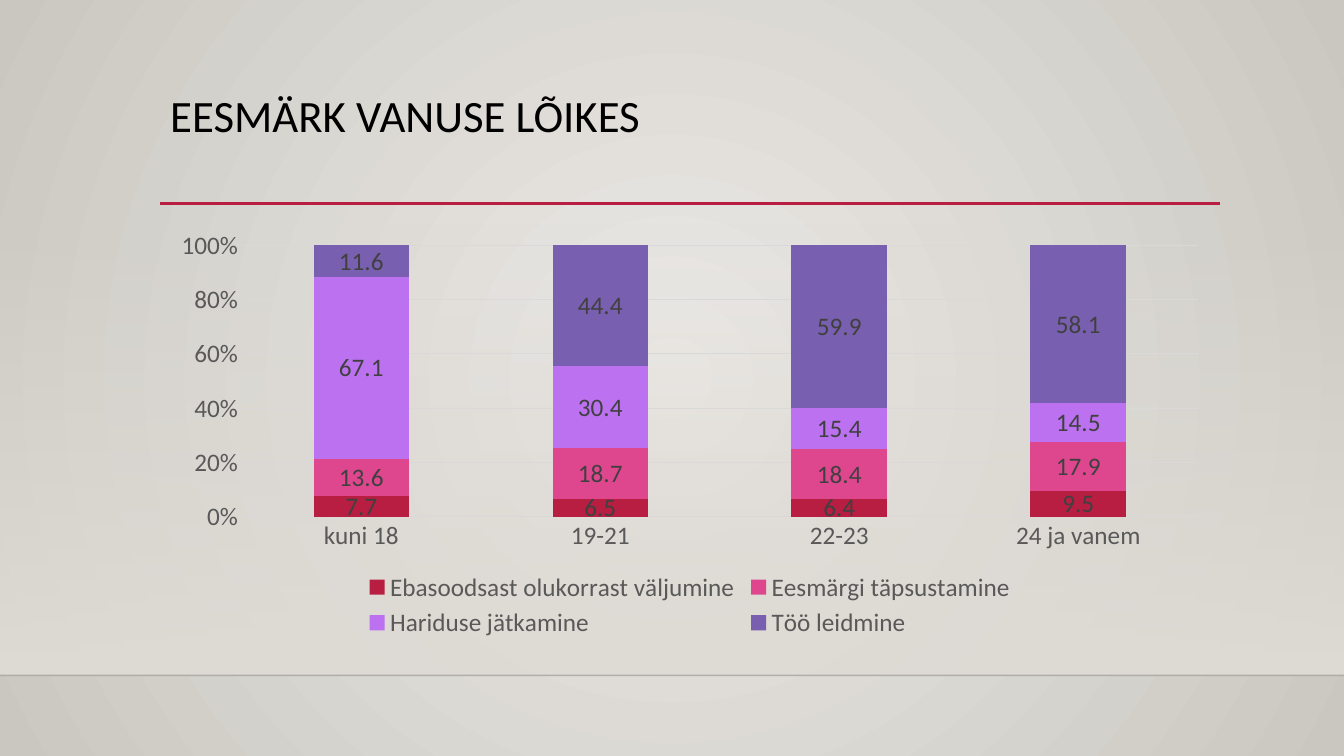
from pptx import Presentation
from pptx.chart.data import CategoryChartData
from pptx.dml.color import RGBColor
from pptx.enum.chart import XL_CHART_TYPE, XL_LABEL_POSITION, XL_LEGEND_POSITION, XL_TICK_MARK
from pptx.enum.shapes import MSO_CONNECTOR, MSO_SHAPE
from pptx.enum.text import MSO_ANCHOR
from pptx.oxml import parse_xml
from pptx.oxml.ns import nsdecls, qn
from pptx.util import Inches, Pt

TITLE = "EESMÄRK VANUSE LÕIKES"
AGES = ["kuni 18", "19-21", "22-23", "24 ja vanem"]
GOALS = [
    ("Ebasoodsast olukorrast väljumine", "B71E42", [7.7, 6.5, 6.4, 9.5]),
    ("Eesmärgi täpsustamine", "DE478E", [13.6, 18.7, 18.4, 17.9]),
    ("Hariduse jätkamine", "BC72F0", [67.1, 30.4, 15.4, 14.5]),
    ("Töö leidmine", "795FAF", [11.6, 44.4, 59.9, 58.1]),
]
FONT = "Calibri"
WIDTH, HEIGHT = 13.33, 7.5
LEFT, CONTENT_WIDTH = 1.59, 10.5
FLOOR_TOP, FLOOR_BOTTOM = 2.21, 6.7
RADIAL = ('<a:path path="circle"><a:fillToRect l="50000" t="50000" '
          'r="50000" b="50000"/></a:path>')
DOWNWARD = '<a:lin ang="5400000" scaled="0"/>'


def rgb(value):
    return RGBColor.from_string(value)


def style_font(font, size, color):
    font.name, font.size = FONT, Pt(size)
    font.color.rgb = rgb(color)


def set_gradient(fill, element, stops, direction):
    """Fill with (position %, colour, opacity %) stops."""
    fill.gradient()
    gs = "".join(
        f'<a:gs pos="{pos * 1000}"><a:srgbClr val="{color}">'
        f'<a:alpha val="{opacity * 1000}"/></a:srgbClr></a:gs>'
        for pos, color, opacity in stops)
    old = next(element.iter(qn("a:gradFill")))
    old.getparent().replace(old, parse_xml(
        f'<a:gradFill {nsdecls("a")} rotWithShape="1">'
        f'<a:gsLst>{gs}</a:gsLst>{direction}</a:gradFill>'))


def add_rule(slide, x1, x2, y, color, width, opacity=100):
    line = slide.shapes.add_connector(
        MSO_CONNECTOR.STRAIGHT, Inches(x1), Inches(y), Inches(x2), Inches(y))
    line.line.color.rgb = rgb(color)
    line.line.width = Pt(width)
    sp_pr = line._element.spPr
    if opacity < 100:
        next(sp_pr.iter(qn("a:srgbClr"))).append(
            parse_xml(f'<a:alpha {nsdecls("a")} val="{opacity * 1000}"/>'))
    sp_pr.append(parse_xml(f'<a:effectLst {nsdecls("a")}/>'))


def add_title(slide):
    box = slide.shapes.add_textbox(
        Inches(LEFT), Inches(0.88), Inches(CONTENT_WIDTH), Inches(1.15))
    tf = box.text_frame
    tf.word_wrap = True
    tf.vertical_anchor = MSO_ANCHOR.TOP
    p = tf.paragraphs[0]
    p.text = TITLE
    p.line_spacing = 0.9
    style_font(p.runs[0].font, 32, "000000")


def add_goal_chart(slide):
    data = CategoryChartData(number_format="0.0")
    data.categories = AGES
    for name, _, values in GOALS:
        data.add_series(name, values)
    chart = slide.shapes.add_chart(
        XL_CHART_TYPE.COLUMN_STACKED_100, Inches(LEFT), Inches(2.2),
        Inches(CONTENT_WIDTH), Inches(4.18), data).chart
    style_font(chart.font, 18, "000000")
    chart.has_title = False
    chart.has_legend = True
    chart.legend.position = XL_LEGEND_POSITION.BOTTOM
    chart.legend.include_in_layout = False
    style_font(chart.legend.font, 18, "595959")

    plot = chart.plots[0]
    plot.gap_width, plot.overlap = 150, 100
    plot.vary_by_categories = False
    for series, (_, color, _) in zip(plot.series, GOALS):
        series.format.fill.solid()
        series.format.fill.fore_color.rgb = rgb(color)
        labels = series.data_labels
        labels.show_value = True
        labels.position = XL_LABEL_POSITION.CENTER
        labels.number_format = "0.0"
        labels.number_format_is_linked = False
        style_font(labels.font, 18, "404040")

    ages, share = chart.category_axis, chart.value_axis
    for axis in (ages, share):
        axis.major_tick_mark = axis.minor_tick_mark = XL_TICK_MARK.NONE
        style_font(axis.tick_labels.font, 18, "595959")
    share.tick_labels.number_format = "0%"
    share.tick_labels.number_format_is_linked = False
    share.format.line.fill.background()
    share.has_major_gridlines = True
    for line in (ages.format.line, share.major_gridlines.format.line):
        line.color.rgb = rgb("D9D9D9")
        line.width = Pt(0.75)


def main():
    prs = Presentation()
    prs.slide_width, prs.slide_height = Inches(WIDTH), Inches(HEIGHT)
    slide = prs.slides.add_slide(prs.slide_layouts[6])
    set_gradient(slide.background.fill, slide._element,
                 [(0, "ECEAE7", 100), (100, "CAC7C1", 100)], RADIAL)

    floor = slide.shapes.add_shape(
        MSO_SHAPE.RECTANGLE, 0, Inches(FLOOR_TOP),
        Inches(WIDTH), Inches(FLOOR_BOTTOM - FLOOR_TOP))
    floor.shadow.inherit = False
    floor.line.fill.background()
    set_gradient(floor.fill, floor._element,
                 [(0, "DFDBD5", 0), (100, "DFDBD5", 100)], DOWNWARD)

    add_rule(slide, 0, WIDTH, FLOOR_BOTTOM, "000001", 1, opacity=20)
    add_rule(slide, LEFT, 12.1, 2.02, "B71E42", 2.5)
    add_title(slide)
    add_goal_chart(slide)
    prs.save("out.pptx")


if __name__ == "__main__":
    main()
